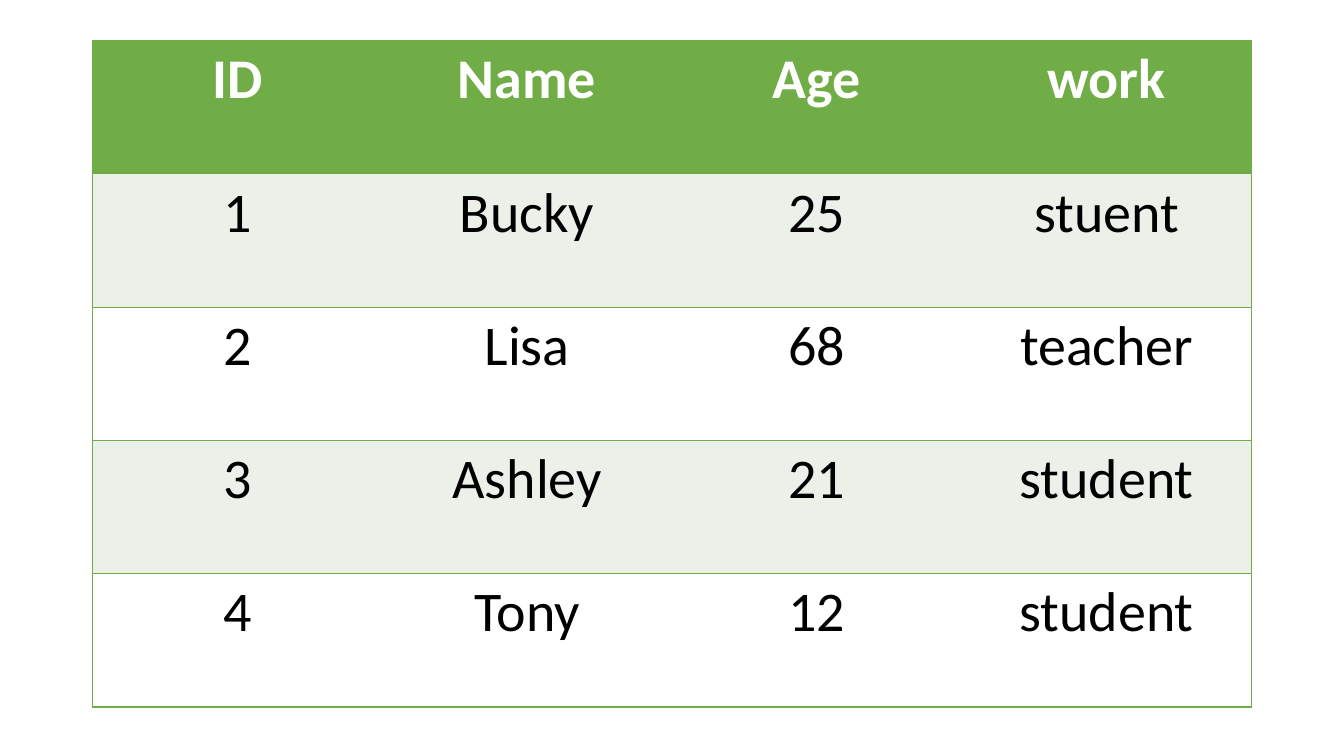
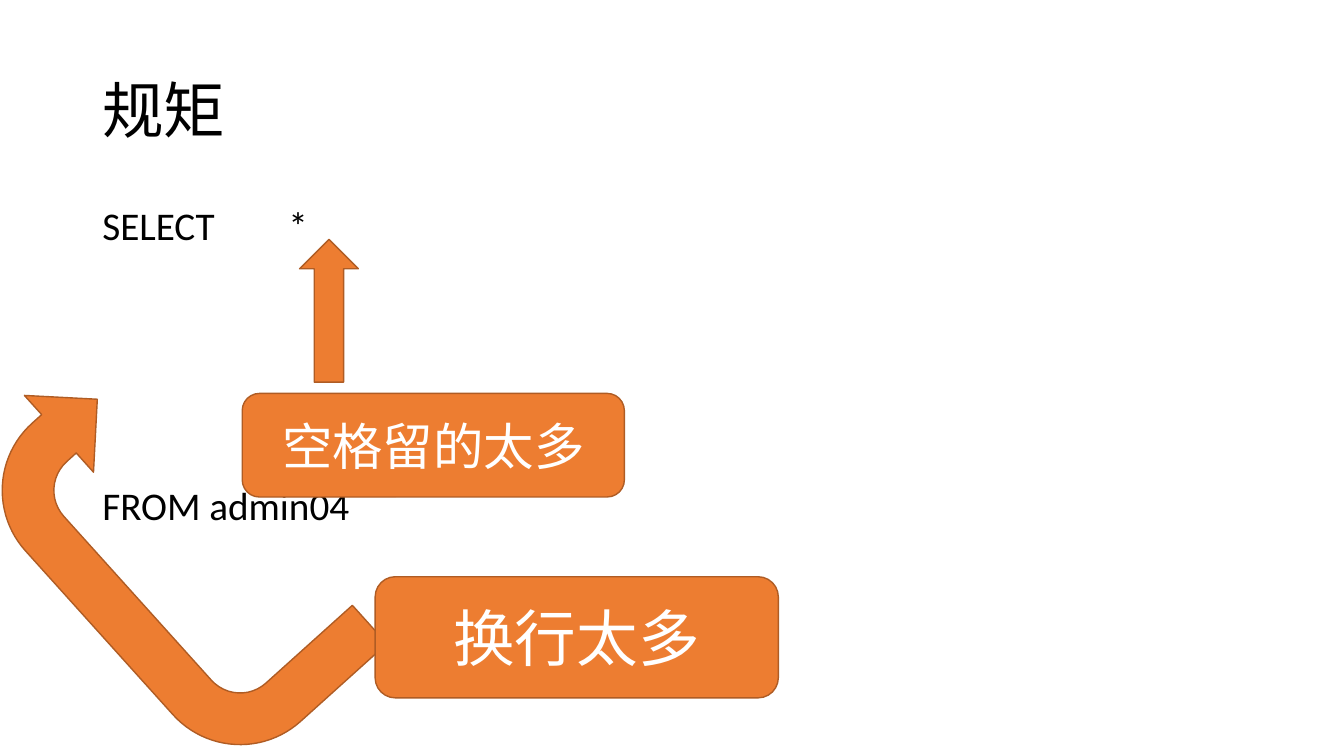
from lxml.etree import SubElement
from pptx import Presentation
from pptx.dml.color import RGBColor
from pptx.enum.shapes import MSO_SHAPE
from pptx.enum.text import MSO_ANCHOR, PP_ALIGN
from pptx.oxml.ns import qn
from pptx.util import Pt

FONT = "Calibri"
BLACK, WHITE = "000000", "FFFFFF"
GREEN, PALE_GREEN = "70AD47", "EBF1E9"
ORANGE, DARK_ORANGE = "ED7D31", "AF5C24"
LEFT, TOP, WIDTH = 66, 29, 828


def rgb(value):
    return RGBColor.from_string(value)


def add_run(p, text, size, color, bold=False):
    r = p.add_run()
    r.text = text
    r.font.name = FONT
    r.font.size = Pt(size)
    r.font.bold = bold
    r.font.color.rgb = rgb(color)


prs = Presentation()
prs.slide_width, prs.slide_height = Pt(960), Pt(540)
blank = prs.slide_layouts[6]

# Slide 1: people table
s = prs.slides.add_slide(blank)
people = [
    ("ID", "Name", "Age", "work"),
    ("1", "Bucky", "25", "stuent"),
    ("2", "Lisa", "68", "teacher"),
    ("3", "Ashley", "21", "student"),
    ("4", "Tony", "12", "student"),
]
n_rows, n_cols = len(people), len(people[0])
table = s.shapes.add_table(n_rows, n_cols, Pt(LEFT), Pt(TOP), Pt(WIDTH), Pt(476)).table
for i, person in enumerate(people):
    header = i == 0
    fill = GREEN if header else PALE_GREEN if i % 2 else WHITE
    for j, text in enumerate(person):
        cell = table.cell(i, j)
        p = cell.text_frame.paragraphs[0]
        p.alignment = PP_ALIGN.CENTER
        add_run(p, text, 40, WHITE if header else BLACK, header)

        # Borders must precede the fill; inner vertical borders are hidden
        tc_pr = cell._tc.get_or_add_tcPr()
        edges = {"lnL": j == 0, "lnR": j == n_cols - 1, "lnT": True, "lnB": True}
        for edge, visible in edges.items():
            ln = SubElement(tc_pr, qn(f"a:{edge}"), w=str(Pt(1)))
            if visible:
                SubElement(SubElement(ln, qn("a:solidFill")), qn("a:srgbClr"), val=GREEN)
            else:
                SubElement(ln, qn("a:noFill"))
        cell.fill.solid()
        cell.fill.fore_color.rgb = rgb(fill)

# Slide 2: layout rules for a query
s = prs.slides.add_slide(blank)
title = s.shapes.add_textbox(Pt(LEFT), Pt(TOP), Pt(WIDTH), Pt(104))
tf = title.text_frame
tf.word_wrap = True
tf.vertical_anchor = MSO_ANCHOR.MIDDLE
p = tf.paragraphs[0]
p.line_spacing = 0.9
add_run(p, "规矩", 44, BLACK)

query = s.shapes.add_textbox(Pt(LEFT), Pt(144), Pt(WIDTH), Pt(343))
tf = query.text_frame
tf.word_wrap = True
for i, (text, space_before) in enumerate([("SELECT\t*", 0), ("FROM admin04", 170)]):
    p = tf.add_paragraph() if i else tf.paragraphs[0]
    p.line_spacing = 0.9
    p.space_before = Pt(space_before)
    add_run(p, text, 28, BLACK)
tabs = SubElement(tf.paragraphs[0]._p.get_or_add_pPr(), qn("a:tabLst"))
SubElement(tabs, qn("a:tab"), pos=str(Pt(133)), algn="l")

callouts = [
    (MSO_SHAPE.UP_ARROW, 214, 171, 42, 102, 0, "", 0),
    (MSO_SHAPE.ROUNDED_RECTANGLE, 173, 281, 273, 74, 0, "空格留的太多", 36),
    (MSO_SHAPE.U_TURN_ARROW, -33, 322, 305, 147.5, 228, "", 0),
    (MSO_SHAPE.ROUNDED_RECTANGLE, 268, 412, 288, 86.5, 0, "换行太多", 44),
]
for kind, left, top, width, height, rotation, text, size in callouts:
    sp = s.shapes.add_shape(kind, Pt(left), Pt(top), Pt(width), Pt(height))
    sp.rotation = rotation
    sp.shadow.inherit = False
    sp.fill.solid()
    sp.fill.fore_color.rgb = rgb(ORANGE)
    sp.line.color.rgb = rgb(DARK_ORANGE)
    sp.line.width = Pt(1)
    if text:
        tf = sp.text_frame
        tf.vertical_anchor = MSO_ANCHOR.MIDDLE
        p = tf.paragraphs[0]
        p.alignment = PP_ALIGN.CENTER
        add_run(p, text, size, WHITE)

prs.save("out.pptx")
